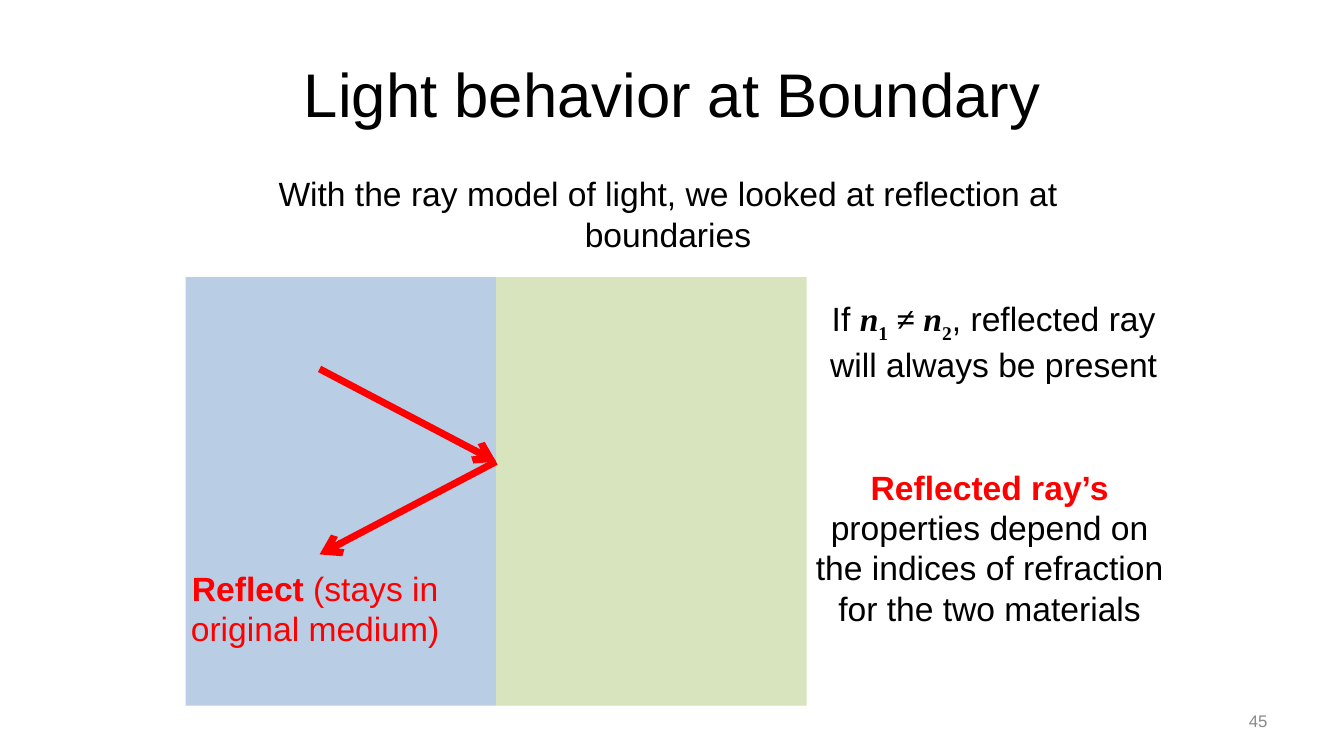
from dataclasses import dataclass

from pptx import Presentation
from pptx.dml.color import RGBColor
from pptx.enum import shapes, text
from pptx.oxml.ns import qn
from pptx.util import Inches, Pt
from lxml import etree


@dataclass(frozen=True)
class Theme:
    sans: str = "Arial"
    serif: str = "Times New Roman"
    ink: str = "000000"
    ray: str = "FF0000"
    near_medium: str = "B9CDE5"
    far_medium: str = "D7E4BD"
    muted: str = "898989"
    title: int = 44
    body: int = 24
    small: int = 12
    ray_width: int = 5


THEME = Theme()


def add_run(paragraph, words, size=THEME.body, color=THEME.ink, font=THEME.sans,
            bold=False, italic=False, subscript=False):
    run = paragraph.add_run()
    run.text = words
    run.font.name, run.font.size = font, Pt(size)
    run.font.bold, run.font.italic = bold, italic
    run.font.color.rgb = RGBColor.from_string(color)
    if subscript:
        run.font._element.set("baseline", "-25000")


class LectureSlide:
    def __init__(self, presentation, theme):
        self.theme = theme
        self.slide = presentation.slides.add_slide(presentation.slide_layouts[5])

    def fill_text(self, holder, runs, align, anchor):
        frame = holder.text_frame
        frame.word_wrap = True
        frame.vertical_anchor = anchor
        paragraph = frame.paragraphs[0]
        paragraph.alignment = align
        for words, style in runs:
            add_run(paragraph, words, **style)

    def title(self, words, left, top, width, height):
        heading = self.slide.shapes.title
        heading.left, heading.top = Inches(left), Inches(top)
        heading.width, heading.height = Inches(width), Inches(height)
        self.fill_text(heading, [(words, {"size": self.theme.title})],
                       text.PP_ALIGN.CENTER, text.MSO_ANCHOR.MIDDLE)

    def note(self, runs, left, top, width, height,
             align=text.PP_ALIGN.CENTER, anchor=text.MSO_ANCHOR.TOP):
        box = self.slide.shapes.add_textbox(
            Inches(left), Inches(top), Inches(width), Inches(height))
        self.fill_text(box, runs, align, anchor)

    def medium(self, color, left, top, width, height):
        block = self.slide.shapes.add_shape(
            shapes.MSO_SHAPE.RECTANGLE,
            Inches(left), Inches(top), Inches(width), Inches(height))
        block.shadow.inherit = False
        block.fill.solid()
        block.fill.fore_color.rgb = RGBColor.from_string(color)
        block.line.fill.background()

    def ray(self, start, end):
        arrow = self.slide.shapes.add_connector(
            shapes.MSO_CONNECTOR.STRAIGHT, *map(Inches, start + end))
        arrow.line.color.rgb = RGBColor.from_string(self.theme.ray)
        arrow.line.width = Pt(self.theme.ray_width)
        etree.SubElement(arrow.line._get_or_add_ln(), qn("a:tailEnd"), type="arrow")
        etree.SubElement(arrow._element.spPr, qn("a:effectLst"))


def main():
    presentation = Presentation()
    presentation.slide_width, presentation.slide_height = Inches(13.33), Inches(7.5)
    page = LectureSlide(presentation, THEME)

    # Heading and introduction
    page.title("Light behavior at Boundary", 0.67, 0.3, 12, 1.25)
    page.note([("With the ray model of light, we looked at reflection at boundaries", {})],
              2.5, 1.67, 8.25, 0.91)

    # Two media meeting at the boundary, with the incident and reflected rays
    medium_width, medium_top, medium_height = 3.08, 2.75, 4.25
    boundary, hit_height = 4.92, 4.58
    ray_run, ray_rise = 1.75, 0.92
    hit = (boundary, hit_height)
    page.medium(THEME.near_medium, boundary - medium_width, medium_top,
                medium_width, medium_height)
    page.ray((boundary - ray_run, hit_height - ray_rise), hit)
    page.medium(THEME.far_medium, boundary, medium_top, medium_width, medium_height)
    red, red_bold = {"color": THEME.ray}, {"color": THEME.ray, "bold": True}
    page.note([("Reflect ", red_bold), ("(stays in original medium)", red)],
              1.5, 5.58, 3.25, 0.91)
    page.ray(hit, (boundary - ray_run, hit_height + ray_rise))

    # Conditions on the reflected ray
    symbol = {"font": THEME.serif, "bold": True}
    variable, index = {**symbol, "italic": True}, {**symbol, "subscript": True}
    page.note([("If ", {}), ("n", variable), ("1", index), (" ≠ ", symbol),
               ("n", variable), ("2", index),
               (", reflected ray will always be present", {})],
              8, 2.91, 3.71, 0.91)
    page.note([("Reflected ray’s ", red_bold),
               ("properties depend on the indices of refraction for the two materials", {})],
              7.96, 4.58, 3.71, 1.72)

    # Page number
    page.note([("45", {"size": THEME.small, "color": THEME.muted})], 9.56, 6.95, 3.11, 0.4,
              align=text.PP_ALIGN.RIGHT, anchor=text.MSO_ANCHOR.MIDDLE)

    presentation.save("out.pptx")


if __name__ == "__main__":
    main()
